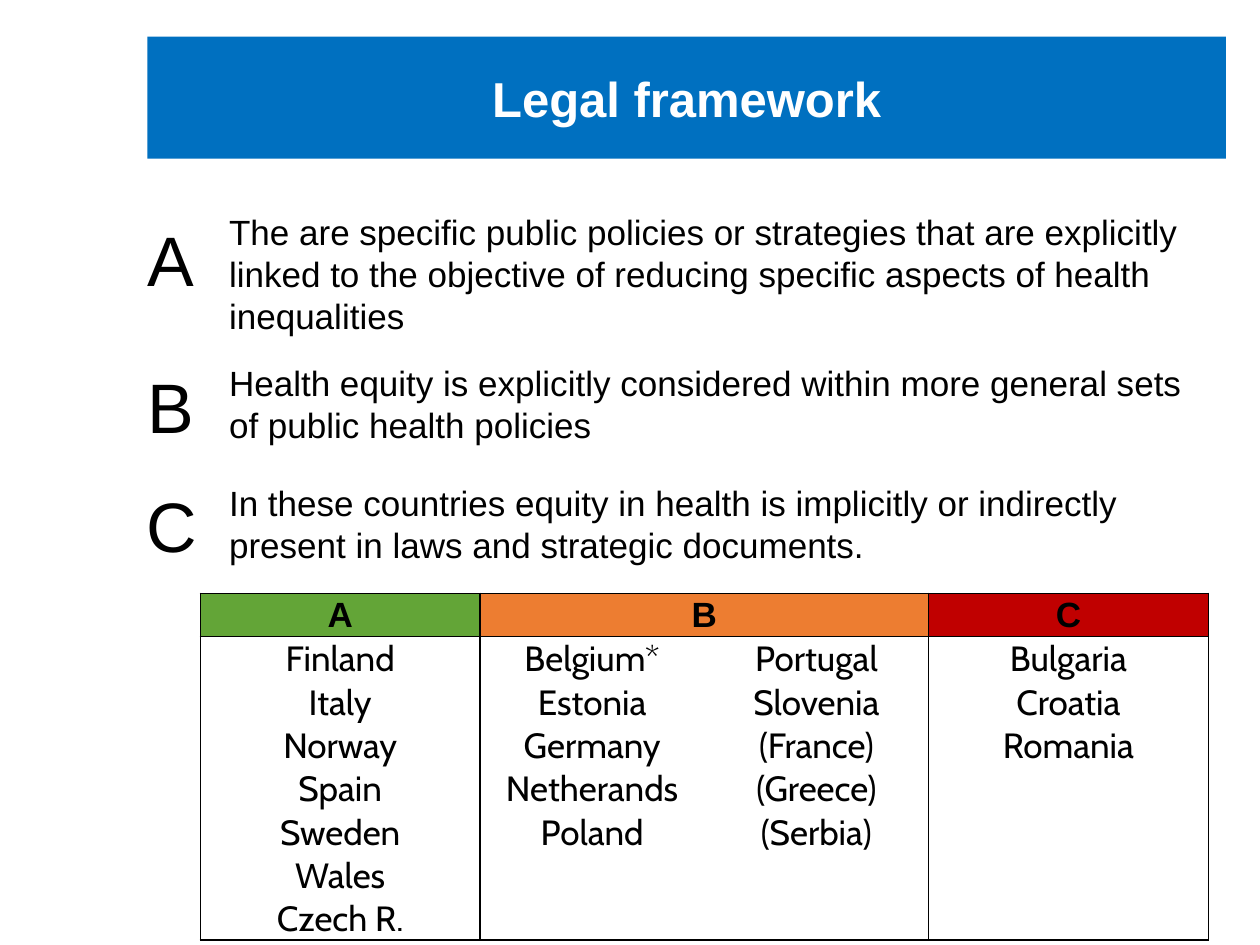
from itertools import zip_longest

from lxml.etree import SubElement
from pptx import Presentation
from pptx.dml.color import RGBColor
from pptx.enum.text import MSO_ANCHOR, PP_ALIGN
from pptx.oxml.ns import qn
from pptx.util import Inches, Pt

COLORS = {
    "banner": "0070C0",
    "white": "FFFFFF",
    "black": "000000",
    "A": "63A537",
    "B": "ED7D31",
    "C": "C00000",
}

CRITERIA = [
    ("A", "The are specific public policies or strategies that are explicitly linked "
          "to the objective of reducing specific aspects of health inequalities",
     1.27, 1.57, 1.62),
    ("B", "Health equity is explicitly considered within more general sets of public "
          "health policies", 2.82, 0.79, 2.82),
    ("C", "In these countries equity in health is implicitly or indirectly present in "
          "laws and strategic documents.", 3.77, 0.79, 3.77),
]

HEADERS = ["A", "B", "", "C"]
COUNTRIES = [
    ["Finland", "Italy", "Norway", "Spain", "Sweden", "Wales", "Czech R."],
    ["Belgium*", "Estonia", "Germany", "Netherands", "Poland"],
    ["Portugal", "Slovenia", "(France)", "(Greece)", "(Serbia)"],
    ["Bulgaria", "Croatia", "Romania"],
]
COL_WIDTHS = [2.22, 1.78, 1.78, 2.22]


def rgb(name):
    return RGBColor.from_string(COLORS[name])


def style(p, size, color="black", font="Arial", bold=False, align=PP_ALIGN.CENTER):
    p.alignment = align
    p.font.size = Pt(size)
    p.font.name = font
    p.font.bold = bold
    p.font.color.rgb = rgb(color)


def add_banner(s, x, y, w, h):
    sp = s.shapes.title
    sp.left, sp.top, sp.width, sp.height = map(Inches, (x, y, w, h))
    sp.fill.solid()
    sp.fill.fore_color.rgb = rgb("banner")
    tf = sp.text_frame
    tf.text = "Legal framework"
    tf.vertical_anchor = MSO_ANCHOR.MIDDLE
    style(tf.paragraphs[0], 28, "white", bold=True)


def add_text(s, text, x, y, w, h, size, align, anchor):
    tf = s.shapes.add_textbox(*map(Inches, (x, y, w, h))).text_frame
    tf.word_wrap = True
    tf.vertical_anchor = anchor
    tf.text = text
    style(tf.paragraphs[0], size, align=align)


def add_criterion(s, letter, text, x, y, h, text_y):
    add_text(s, letter, x, y, 0.7, h, 40, PP_ALIGN.CENTER, MSO_ANCHOR.MIDDLE)
    add_text(s, text, x + 0.71, text_y, 7.87, y + h - text_y, 20,
             PP_ALIGN.LEFT, MSO_ANCHOR.TOP)


def set_borders(cell, edges):
    tcPr = cell._tc.get_or_add_tcPr()
    for edge in "LRTB":
        ln = SubElement(tcPr, qn(f"a:ln{edge}"), w=str(Pt(1)))
        if edge in edges:
            fill = SubElement(ln, qn("a:solidFill"))
            SubElement(fill, qn("a:srgbClr"), val=COLORS["black"])
        else:
            SubElement(ln, qn("a:noFill"))


def cell_edges(row, col, last_row):
    edges = ""
    if col != 2:
        edges += "L"
    if col != 1 or row == 0:
        edges += "R"
    if row <= 1:
        edges += "T"
    if row in (0, last_row):
        edges += "B"
    return edges


def add_country_table(s, x, y, w, h):
    rows = [HEADERS, *zip_longest(*COUNTRIES, fillvalue="")]
    frame = s.shapes.add_table(len(rows), len(COL_WIDTHS), *map(Inches, (x, y, w, h)))
    table = frame.table
    table.first_row = table.horz_banding = False
    for column, width in zip(table.columns, COL_WIDTHS):
        column.width = Inches(width)
    for r, names in enumerate(rows):
        table.rows[r].height = Inches(0.34 if r else 0.31)
        for c, name in enumerate(names):
            cell = table.cell(r, c)
            cell.margin_left = cell.margin_right = cell.margin_top = Inches(0.01)
            cell.margin_bottom = 0
            cell.vertical_anchor = MSO_ANCHOR.MIDDLE
            set_borders(cell, cell_edges(r, c, len(rows) - 1))
            cell.fill.solid()
            cell.fill.fore_color.rgb = rgb("white" if r else name or "B")
            if name:
                cell.text = name
            style(cell.text_frame.paragraphs[0], 20,
                  font="Cabin" if r else "Arial", bold=r == 0)
    table.cell(0, 1).merge(table.cell(0, 2))


def main():
    prs = Presentation()
    prs.slide_width, prs.slide_height = Inches(10), Inches(7.5)
    s = prs.slides.add_slide(prs.slide_layouts[5])
    add_banner(s, 1.17, 0.29, 8.56, 0.97)
    for letter, text, y, h, text_y in CRITERIA:
        add_criterion(s, letter, text, 1.01, y, h, text_y)
    add_country_table(s, 1.59, 4.71, 8, 2.73)
    prs.save("out.pptx")


if __name__ == "__main__":
    main()
